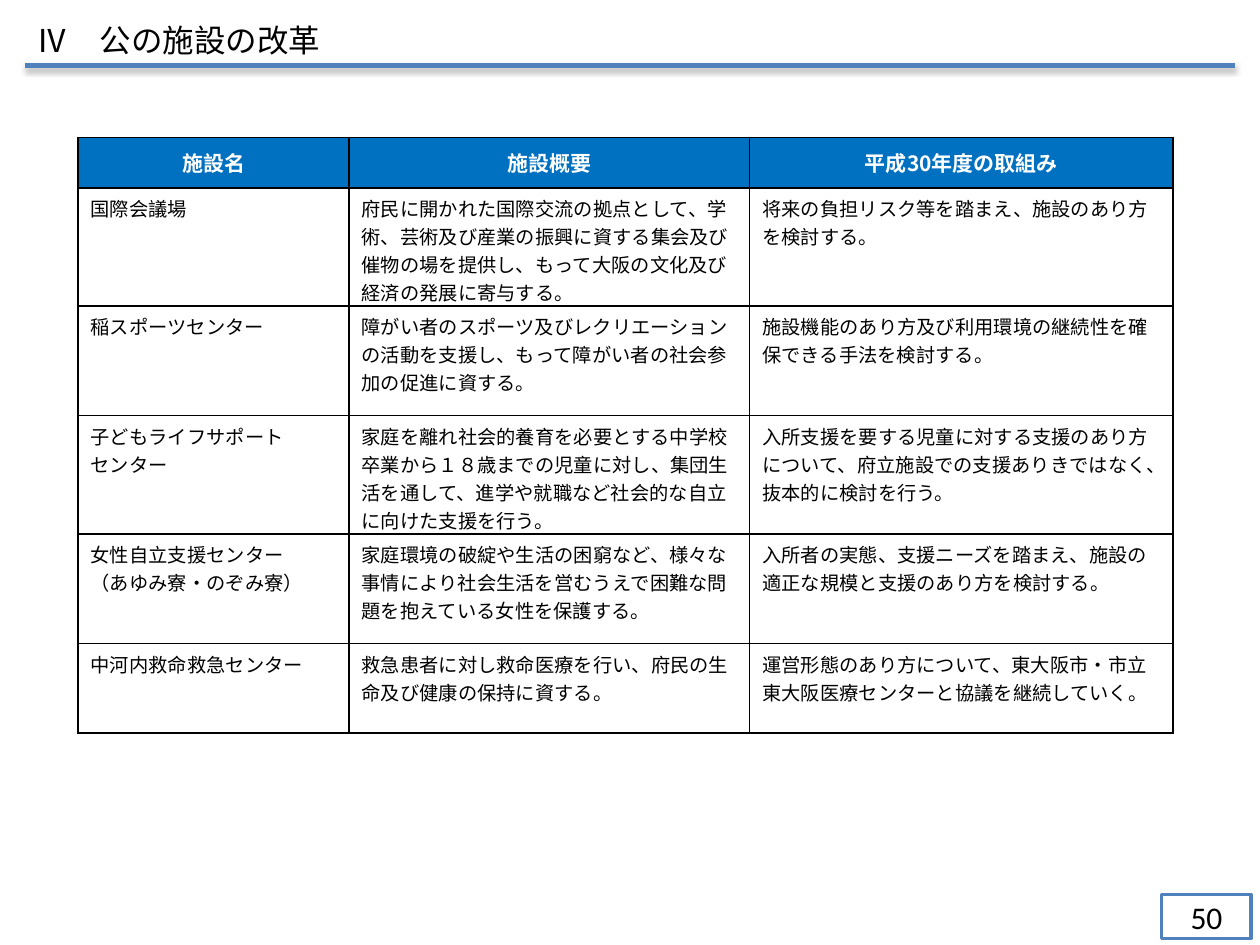
"""Build the slide on the reform of public facilities."""
from lxml import etree
from pptx import Presentation
from pptx import util as u
from pptx.dml.color import RGBColor
from pptx.enum import shapes, text
from pptx.oxml import parse_xml
from pptx.oxml.ns import qn

JAPANESE = "Noto Sans CJK JP"
NAMESPACE = 'xmlns:a="http://schemas.openxmlformats.org/drawingml/2006/main"'
BLUE = "4F81BD"


def color(value):
    return RGBColor.from_string(value)


def write(frame, content, font, size, ink="000000", bold=False, align=text.PP_ALIGN.LEFT):
    frame.word_wrap = True
    frame.text = content
    for para in frame.paragraphs:
        para.alignment = align
        for span in para.runs:
            for name, value in {"name": font, "size": u.Pt(size), "bold": bold}.items():
                setattr(span.font, name, value)
            span.font.color.rgb = color(ink)
            east_asian = etree.SubElement(span.font._element, qn("a:ea"))
            east_asian.set("typeface", font)


deck = Presentation()
deck.slide_width, deck.slide_height = u.Inches(10), u.Inches(7.5)
page = deck.slides.add_slide(deck.slide_layouts[5])

number_box = page.shapes.add_shape(
    shapes.MSO_SHAPE.RECTANGLE, u.Inches(9.22), u.Inches(7.1), u.Inches(0.71), u.Inches(0.35))
number_box.shadow.inherit = False
number_box.fill.solid()
number_box.fill.fore_color.rgb = color("FFFFFF")
number_box.line.color.rgb = color(BLUE)
number_box.line.width = u.Pt(2)
number_box.text_frame.vertical_anchor = text.MSO_ANCHOR.MIDDLE
write(number_box.text_frame, "50", "Calibri", 18, align=text.PP_ALIGN.CENTER)

title = page.shapes.title
for name, value in {"left": 0.19, "top": 0.12, "width": 8.9, "height": 0.4}.items():
    setattr(title, name, u.Inches(value))
title.text_frame.vertical_anchor = text.MSO_ANCHOR.MIDDLE
write(title.text_frame, "Ⅳ\u3000公の施設の改革", JAPANESE, 18)
title.text_frame.auto_size = text.MSO_AUTO_SIZE.NONE

rule = page.shapes.add_connector(
    shapes.MSO_CONNECTOR.STRAIGHT, u.Inches(0.2), u.Inches(0.52), u.Inches(9.8), u.Inches(0.52))
rule.line.color.rgb = color(BLUE)
rule.line.width = u.Pt(3)
rule._element.spPr.append(parse_xml(
    f'<a:effectLst {NAMESPACE}><a:outerShdw blurRad="{u.Pt(3.1)}" dist="{u.Pt(1.8)}" '
    'dir="5400000" rotWithShape="0"><a:srgbClr val="000000"><a:alpha val="35000"/>'
    '</a:srgbClr></a:outerShdw></a:effectLst>'))

rows = [
    ("施設名", "施設概要", "平成30年度の取組み"),
    ("国際会議場",
     "府民に開かれた国際交流の拠点として、学術、芸術及び産業の振興に資する集会及び催物の場を提供し、もって大阪の文化及び経済の発展に寄与する。",
     "将来の負担リスク等を踏まえ、施設のあり方を検討する。"),
    ("稲スポーツセンター",
     "障がい者のスポーツ及びレクリエーションの活動を支援し、もって障がい者の社会参加の促進に資する。",
     "施設機能のあり方及び利用環境の継続性を確保できる手法を検討する。"),
    ("子どもライフサポート\nセンター",
     "家庭を離れ社会的養育を必要とする中学校卒業から１８歳までの児童に対し、集団生活を通して、進学や就職など社会的な自立に向けた支援を行う。",
     "入所支援を要する児童に対する支援のあり方について、府立施設での支援ありきではなく、抜本的に検討を行う。"),
    ("女性自立支援センター\n（あゆみ寮・のぞみ寮）",
     "家庭環境の破綻や生活の困窮など、様々な事情により社会生活を営むうえで困難な問題を抱えている女性を保護する。",
     "入所者の実態、支援ニーズを踏まえ、施設の適正な規模と支援のあり方を検討する。"),
    ("中河内救命救急センター",
     "救急患者に対し救命医療を行い、府民の生命及び健康の保持に資する。",
     "運営形態のあり方について、東大阪市・市立東大阪医療センターと協議を継続していく。"),
]
widths = [2.15, 3.18, 3.36]
heights = [0.4, 0.94, 0.87, 0.94, 0.87, 0.71]
table = page.shapes.add_table(
    len(rows), len(widths), u.Inches(0.62), u.Inches(1.09),
    u.Inches(sum(widths)), u.Inches(sum(heights))).table
table.horz_banding = False
for column, width in zip(table.columns, widths):
    column.width = u.Inches(width)
for row, height in zip(table.rows, heights):
    row.height = u.Inches(height)

header = {"size": 12, "ink": "FFFFFF", "bold": True, "align": text.PP_ALIGN.CENTER}
for row_index, row in enumerate(rows):
    is_header = row_index == 0
    for column_index, content in enumerate(row):
        cell = table.cell(row_index, column_index)
        write(cell.text_frame, content, JAPANESE, **(header if is_header else {"size": 11}))
        cell.vertical_anchor = text.MSO_ANCHOR.MIDDLE if is_header else text.MSO_ANCHOR.TOP
        cell.margin_bottom = u.Inches(0.05 if is_header else 0)
        properties = cell._tc.get_or_add_tcPr()
        for side in ("lnL", "lnR", "lnT", "lnB"):
            properties.append(parse_xml(
                f'<a:{side} {NAMESPACE} w="{u.Pt(1)}"><a:solidFill>'
                f'<a:srgbClr val="000000"/></a:solidFill></a:{side}>'))
        cell.fill.solid()
        cell.fill.fore_color.rgb = color("0070C0" if is_header else "FFFFFF")

deck.save("out.pptx")
